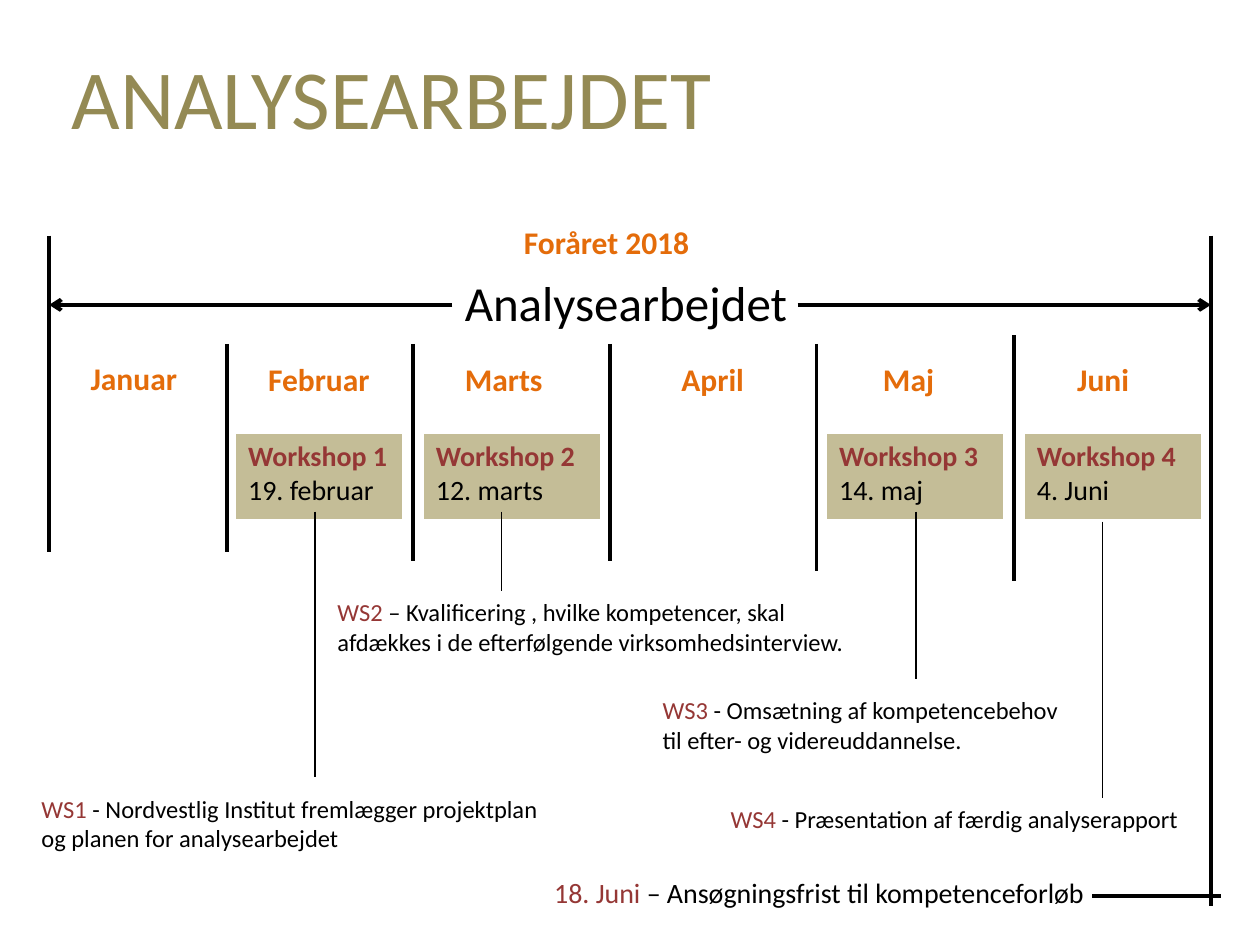
from lxml.etree import SubElement
from pptx import Presentation
from pptx.dml.color import RGBColor
from pptx.enum.shapes import MSO_CONNECTOR
from pptx.enum.text import MSO_AUTO_SIZE
from pptx.oxml.ns import qn
from pptx.util import Inches, Pt

BLACK = RGBColor(0x00, 0x00, 0x00)
WHITE = RGBColor(0xFF, 0xFF, 0xFF)
OLIVE = RGBColor(0x94, 0x8A, 0x54)
ORANGE = RGBColor(0xE4, 0x6C, 0x0A)
MAROON = RGBColor(0x95, 0x37, 0x35)
SAND = RGBColor(0xC4, 0xBD, 0x97)

START, END = 0.39, 9.61
SPAN_Y = 2.42
MONTH_Y = 2.81
WORKSHOP_Y, WORKSHOP_HEIGHT = 3.44, 0.7

MONTHS = [
    ("Januar", 0.62, 2.8, 0.95),
    ("Februar", 2.03, MONTH_Y, 1.07),
    ("Marts", 3.59, MONTH_Y, 0.82),
    ("April", 5.31, MONTH_Y, 0.76),
    ("Maj", 6.91, MONTH_Y, 0.67),
    ("Juni", 8.45, MONTH_Y, 0.62),
]
MONTH_DIVIDERS = [
    (START, 1.87, 4.38),
    (1.8, 2.73, 4.38),
    (3.28, 2.73, 4.45),
    (4.84, 2.73, 4.45),
    (6.48, 2.73, 4.53),
    (8.05, 2.66, 4.61),
    (END, 1.87, 7.19),
]
WORKSHOPS = [
    ("Workshop 1", "19. februar", 1.87, 1.33),
    ("Workshop 2", "12. marts", 3.36, 1.41),
    ("Workshop 3", "14. maj", 6.56, 1.41),
    ("Workshop 4", "4. Juni", 8.13, 1.41),
]
POINTERS = [(2.5, 4.06, 6.17), (3.98, 4.06, 4.69), (7.27, 4.06, 5.39), (8.75, 4.14, 6.33)]
NOTES = [
    ("WS1", [" - Nordvestlig Institut fremlægger projektplan",
             "og planen for analysearbejdet"], (0.23, 6.25, 4.38, 0.57)),
    ("WS2", [" – Kvalificering , hvilke kompetencer, skal",
             "afdækkes i de efterfølgende virksomhedsinterview."], (2.58, 4.69, 5, 0.57)),
    ("WS3", [" - Omsætning af kompetencebehov",
             "til efter- og videreuddannelse."], (5.16, 5.47, 3.52, 0.57)),
    ("WS4 ", ["- Præsentation af færdig analyserapport"], (5.7, 6.33, 3.83, 0.34)),
]


def add_run(paragraph, text, size=14, color=BLACK, bold=False):
    run = paragraph.add_run()
    run.text = text
    run.font.name = "Calibri"
    run.font.size = Pt(size)
    run.font.bold = bold
    run.font.color.rgb = color


def add_label(slide, box, wrap=True, grow=True):
    frame = slide.shapes.add_textbox(*map(Inches, box)).text_frame
    frame.word_wrap = wrap
    frame.auto_size = MSO_AUTO_SIZE.SHAPE_TO_FIT_TEXT if grow else MSO_AUTO_SIZE.NONE
    return frame


def add_text(slide, text, box, wrap=True, grow=True, **font):
    add_run(add_label(slide, box, wrap, grow).paragraphs[0], text, **font)


def add_note(slide, lead, lines, box, size=14, wrap=True):
    frame = add_label(slide, box, wrap)
    first = frame.paragraphs[0]
    add_run(first, lead, size=size, color=MAROON)
    add_run(first, lines[0], size=size)
    for line in lines[1:]:
        add_run(frame.add_paragraph(), line, size=size)


def add_line(slide, start, end, width=2.25, arrow=False):
    line = slide.shapes.add_connector(
        MSO_CONNECTOR.STRAIGHT, *map(Inches, (*start, *end)))
    line.line.color.rgb = BLACK
    line.line.width = Pt(width)
    if arrow:
        SubElement(line.line._get_or_add_ln(), qn("a:tailEnd"), type="arrow")
    SubElement(line._element.spPr, qn("a:effectLst"))


def add_borders(cell):
    properties = cell._tc.get_or_add_tcPr()
    for index, (side, width) in enumerate([("L", 1), ("R", 1), ("T", 1), ("B", 3)]):
        border = properties.makeelement(qn(f"a:ln{side}"), {"w": str(Pt(width))})
        fill = SubElement(border, qn("a:solidFill"))
        SubElement(fill, qn("a:srgbClr"), val=str(WHITE))
        properties.insert(index, border)


def add_workshop(slide, name, date, left, width):
    box = map(Inches, (left, WORKSHOP_Y, width, WORKSHOP_HEIGHT))
    cell = slide.shapes.add_table(1, 1, *box).table.cell(0, 0)
    cell.fill.solid()
    cell.fill.fore_color.rgb = SAND
    add_borders(cell)
    frame = cell.text_frame
    add_run(frame.paragraphs[0], name, size=16, color=MAROON, bold=True)
    add_run(frame.add_paragraph(), date, size=16)


def main():
    presentation = Presentation()
    presentation.slide_width = Inches(10)
    presentation.slide_height = Inches(7.5)
    slide = presentation.slides.add_slide(presentation.slide_layouts[6])

    add_text(slide, "ANALYSEARBEJDET", (0.47, 0.31, 8.98, 1.25),
             grow=False, size=48, color=OLIVE)
    add_text(slide, "Foråret 2018", (4.06, 1.72, 1.56, 0.4),
             size=18, color=ORANGE, bold=True)
    add_text(slide, "Analysearbejdet", (3.59, 2.11, 2.81, 0.57), size=28)
    add_line(slide, (3.59, SPAN_Y), (START, SPAN_Y), arrow=True)
    add_line(slide, (6.33, SPAN_Y), (END, SPAN_Y), arrow=True)

    for x, top, bottom in MONTH_DIVIDERS:
        add_line(slide, (x, top), (x, bottom))
    for month, left, top, width in MONTHS:
        add_text(slide, month, (left, top, width, 0.4), wrap=False,
                 size=18, color=ORANGE, bold=True)
    for workshop in WORKSHOPS:
        add_workshop(slide, *workshop)
    for x, top, bottom in POINTERS:
        add_line(slide, (x, top), (x, bottom), width=1)
    for note in NOTES:
        add_note(slide, *note)

    add_note(slide, "18. Juni ", ["– Ansøgningsfrist til kompetenceforløb"],
             (4.3, 6.9, 4.56, 0.37), size=16, wrap=False)
    add_line(slide, (8.67, 7.11), (9.69, 7.11))

    presentation.save("out.pptx")


if __name__ == "__main__":
    main()
